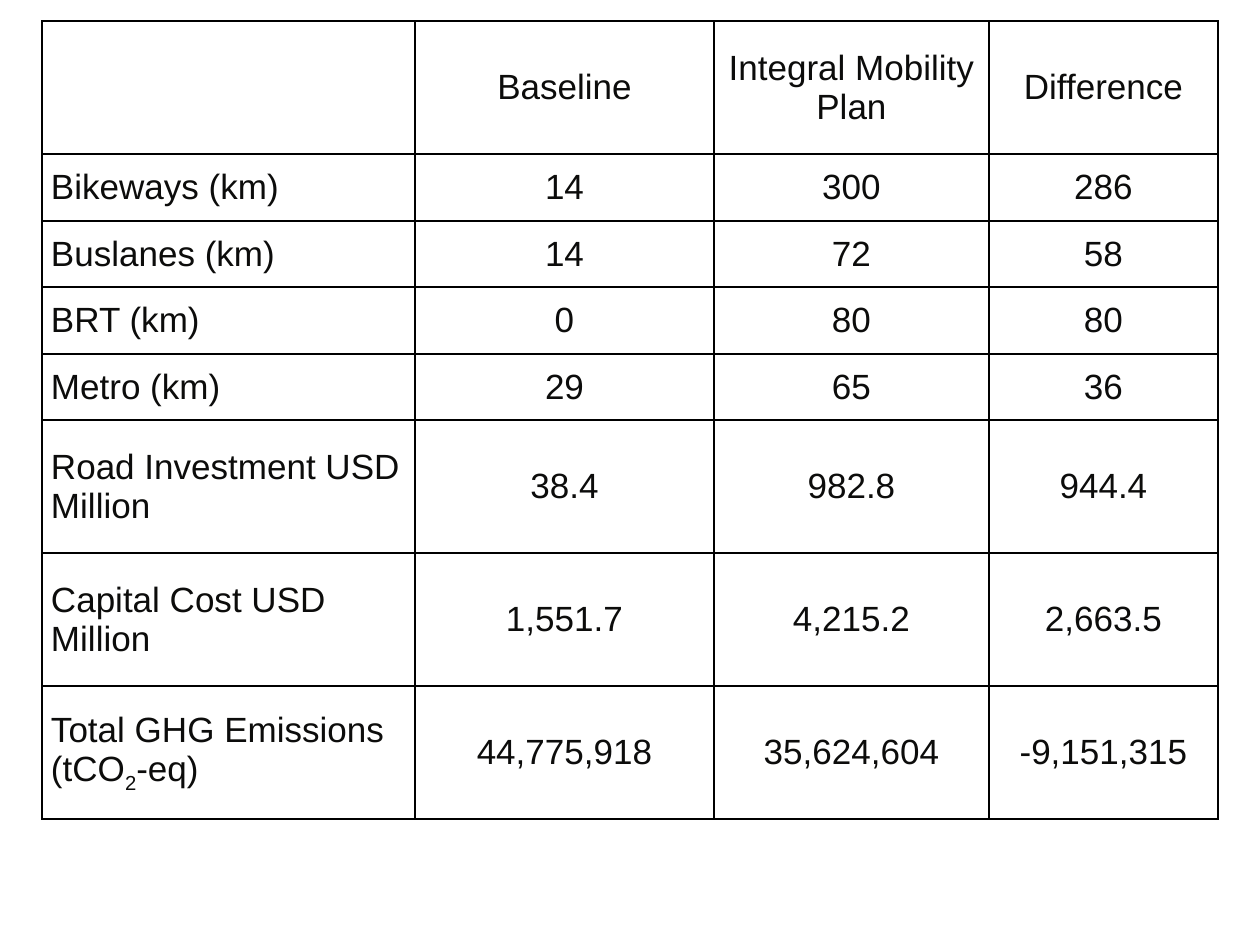
"""Build a slide comparing the baseline with the Integral Mobility Plan."""
from lxml import etree
from pptx import Presentation
from pptx import util as u
from pptx.dml.color import RGBColor
from pptx.enum import text
from pptx.oxml import ns

PX = 914400 / 126
INK = RGBColor(0x0C, 0x0C, 0x0B)
LINE = RGBColor(0, 0, 0)

WIDTHS = [373, 299, 275, 229]
TALL = 133
HEIGHTS = [TALL, 67, 66, 67, 66, TALL, TALL, TALL]
ROWS = [
    ["", "Baseline", "Integral Mobility Plan", "Difference"],
    ["Bikeways (km)", "14", "300", "286"],
    ["Buslanes (km)", "14", "72", "58"],
    ["BRT (km)", "0", "80", "80"],
    ["Metro (km)", "29", "65", "36"],
    ["Road Investment USD Million", "38.4", "982.8", "944.4"],
    ["Capital Cost USD Million", "1,551.7", "4,215.2", "2,663.5"],
    ["Total GHG Emissions (tCO~2~-eq)", "44,775,918", "35,624,604", "-9,151,315"],
]


def px(n):
    return u.Emu(round(n * PX))


class Deck:
    """Hold the text style and the current slide."""

    def __init__(self, slide, font="Arial", size=20):
        self.slide = slide
        self.font = font
        self.size = size

    def table(self, x, y, widths, heights, rows):
        frame = self.slide.shapes.add_table(
            len(rows), len(widths), px(x), px(y), px(sum(widths)), px(sum(heights)))
        grid = frame.table
        grid.first_row = grid.horz_banding = False
        for col, width in zip(grid.columns, widths):
            col.width = px(width)
        for row, height, words in zip(grid.rows, heights, rows):
            row.height = px(height)
            for i, (cell, word) in enumerate(zip(row.cells, words)):
                align = text.PP_ALIGN.CENTER if i else text.PP_ALIGN.LEFT
                self.cell(cell, word, align)

    def cell(self, cell, word, align):
        cell.margin_left = cell.margin_right = px(9)
        cell.margin_top = cell.margin_bottom = 0
        cell.vertical_anchor = text.MSO_ANCHOR.MIDDLE
        self.border(cell)
        cell.fill.background()
        para = cell.text_frame.paragraphs[0]
        para.alignment = align
        for i, part in enumerate(word.split("~") if word else []):
            run = para.add_run()
            run.text = part
            run.font.name = self.font
            run.font.size = u.Pt(self.size)
            run.font.color.rgb = INK
            if i % 2:
                run._r.get_or_add_rPr().set("baseline", "-25000")

    def border(self, cell):
        props = cell._tc.get_or_add_tcPr()
        for side in "LRTB":
            line = etree.SubElement(props, ns.qn(f"a:ln{side}"), w=str(u.Pt(1)))
            fill = etree.SubElement(line, ns.qn("a:solidFill"))
            etree.SubElement(fill, ns.qn("a:srgbClr"), val=str(LINE))


def main():
    show = Presentation()
    show.slide_width, show.slide_height = px(1260), px(945)
    deck = Deck(show.slides.add_slide(show.slide_layouts[6]))
    deck.table(42, 21, WIDTHS, HEIGHTS, ROWS)
    show.save("out.pptx")


if __name__ == "__main__":
    main()
